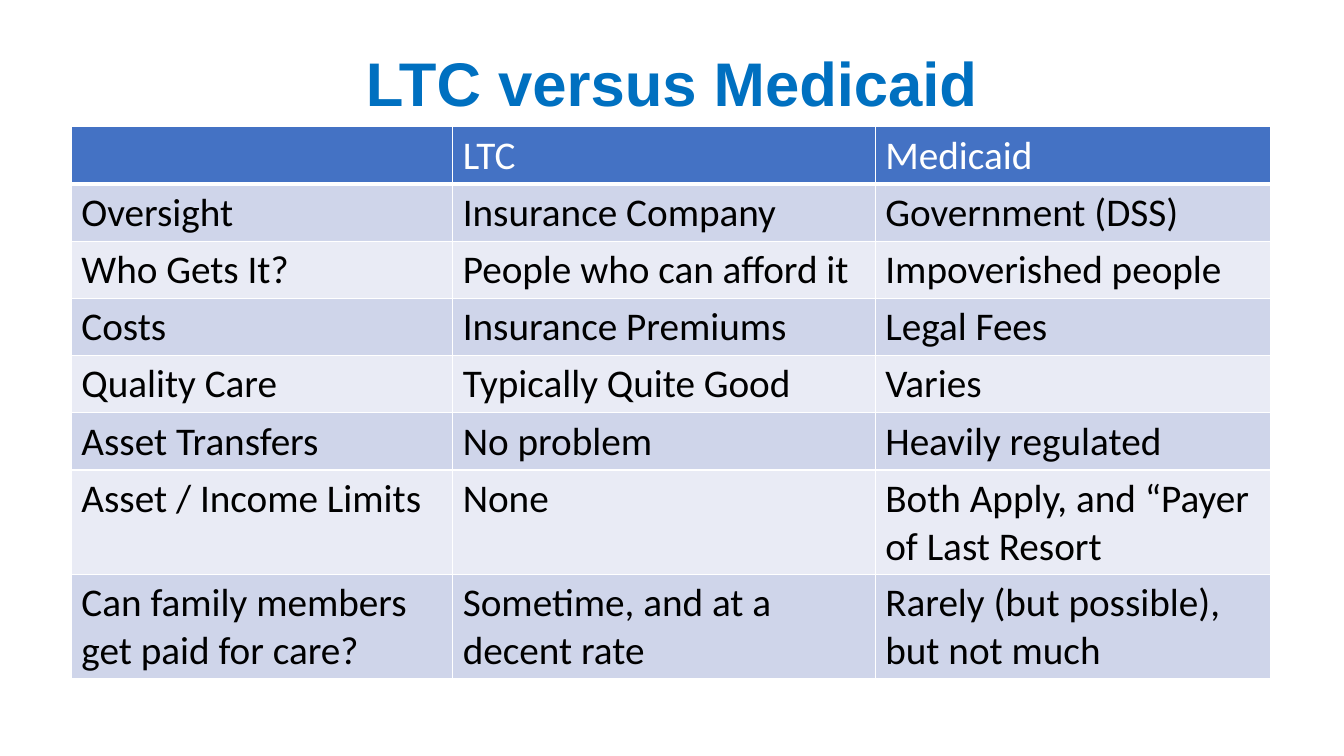
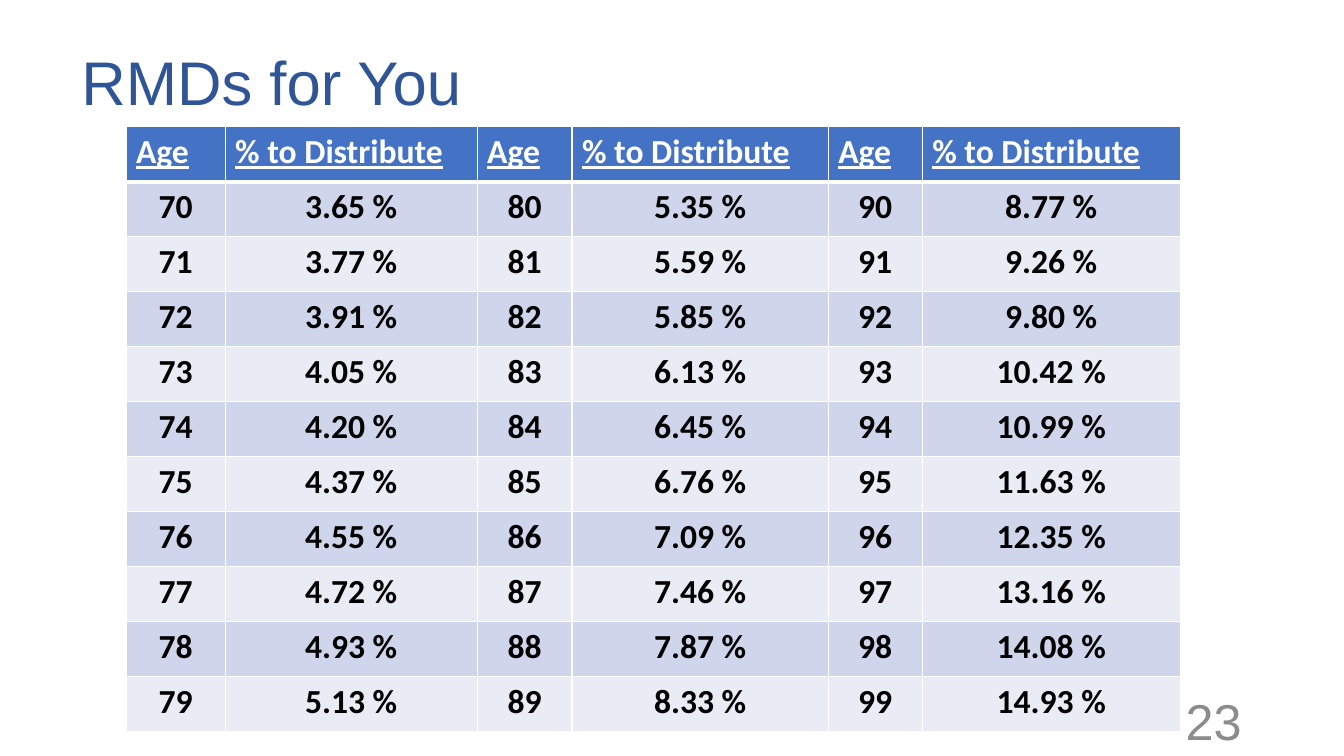
import lxml.etree
import pptx
import pptx.dml.color
import pptx.enum.text
import pptx.oxml.ns
import pptx.util

LEFT = pptx.enum.text.PP_ALIGN.LEFT
CENTER = pptx.enum.text.PP_ALIGN.CENTER
RIGHT = pptx.enum.text.PP_ALIGN.RIGHT
WHITE, BLACK, HEADER_BLUE, BANDS = "FFFFFF", "000000", "4472C4", ("E9EBF5", "CFD5EA")


def rgb(value):
    return pptx.dml.color.RGBColor.from_string(value)


def write(frame, text, size, color, font="Calibri", align=LEFT, bold=False,
          underline=False, spacing=1.0):
    frame.word_wrap = True
    paragraph = frame.paragraphs[0]
    paragraph.alignment = align
    paragraph.line_spacing = spacing
    run = paragraph.add_run()
    run.text = text
    run.font.name = font
    run.font.size = pptx.util.Pt(size)
    run.font.bold = bold
    run.font.underline = underline
    run.font.color.rgb = rgb(color)


deck = pptx.Presentation()
deck.slide_width = pptx.util.Inches(13.33)
deck.slide_height = pptx.util.Inches(7.5)
column = deck.slide_width / 160
row = deck.slide_height / 90

care_rows = [
    ("", "LTC", "Medicaid"),
    ("Oversight", "Insurance Company", "Government (DSS)"),
    ("Who Gets It?", "People who can afford it", "Impoverished people"),
    ("Costs", "Insurance Premiums", "Legal Fees"),
    ("Quality Care", "Typically Quite Good", "Varies"),
    ("Asset Transfers", "No problem", "Heavily regulated"),
    ("Asset / Income Limits", "None", "Both Apply, and “Payer of Last Resort"),
    ("Can family members get paid for care?", "Sometime, and at a decent rate",
     "Rarely (but possible), but not much"),
]

rates_by_decade = {
    70: (3.65, 3.77, 3.91, 4.05, 4.20, 4.37, 4.55, 4.72, 4.93, 5.13),
    80: (5.35, 5.59, 5.85, 6.13, 6.45, 6.76, 7.09, 7.46, 7.87, 8.33),
    90: (8.77, 9.26, 9.80, 10.42, 10.99, 11.63, 12.35, 13.16, 14.08, 14.93),
}
rmd_rows = [("Age", "% to Distribute") * len(rates_by_decade)]
for year in range(10):
    rmd_rows.append([text for decade, rates in rates_by_decade.items()
                     for text in (str(decade + year), f"{rates[year]:.2f} %")])

topics = [
    {
        "title": "LTC versus Medicaid",
        "title_box": (11, 4.6, 138, 11.5),
        "title_format": {"color": "0070C0", "align": CENTER, "bold": True},
        "rows": care_rows,
        "table_left": 8.5,
        "widths": (45.4, 50.3, 47.1),
        "heights": [6.24] * 6 + [11.4] * 2,
        "header_format": {"size": 28},
        "body_format": {"size": 28},
        "number": "",
    },
    {
        "title": "RMDs for You",
        "title_box": (8.5, 3.8, 123.5, 12.7),
        "title_format": {"color": "2F5597"},
        "rows": rmd_rows,
        "table_left": 15,
        "widths": (11.8, 30, 11.3, 30.5, 11.2, 30.7),
        "heights": [6.55] * 11,
        "header_format": {"size": 24, "bold": True, "underline": True},
        "body_format": {"size": 24, "bold": True, "align": CENTER},
        "number": "23",
    },
]

for topic in topics:
    slide = deck.slides.add_slide(deck.slide_layouts[6])

    labels = [(topic["title"], topic["title_box"],
               {"size": 44, "spacing": 0.9, **topic["title_format"]})]
    if topic["number"]:
        labels.append((topic["number"], (113, 83.4, 36, 4.8),
                       {"size": 36, "color": "8C8C8C", "align": RIGHT}))
    for text, (left, top, width, height), style in labels:
        label = slide.shapes.add_textbox(int(left * column), int(top * row),
                                         int(width * column), int(height * row))
        label.text_frame.vertical_anchor = pptx.enum.text.MSO_ANCHOR.MIDDLE
        write(label.text_frame, text, font="Arial", **style)

    widths, heights = topic["widths"], topic["heights"]
    table = slide.shapes.add_table(
        len(heights), len(widths), int(topic["table_left"] * column), int(15.1 * row),
        int(sum(widths) * column), int(sum(heights) * row)).table
    for index, width in enumerate(widths):
        table.columns[index].width = int(width * column)
    for index, height in enumerate(heights):
        table.rows[index].height = int(height * row)
        is_header = index == 0
        style = topic["header_format"] if is_header else topic["body_format"]
        for cell, text in zip(table.rows[index].cells, topic["rows"][index]):
            properties = cell._tc.get_or_add_tcPr()
            for side in ("L", "R", "T", "B"):
                points = 3 if is_header and side == "B" else 1
                border = lxml.etree.SubElement(
                    properties, pptx.oxml.ns.qn(f"a:ln{side}"), w=str(pptx.util.Pt(points)))
                fill = lxml.etree.SubElement(border, pptx.oxml.ns.qn("a:solidFill"))
                lxml.etree.SubElement(fill, pptx.oxml.ns.qn("a:srgbClr"), val=WHITE)
            cell.fill.solid()
            cell.fill.fore_color.rgb = rgb(HEADER_BLUE if is_header else BANDS[index % 2])
            if text:
                write(cell.text_frame, text, color=WHITE if is_header else BLACK, **style)

deck.save("out.pptx")
